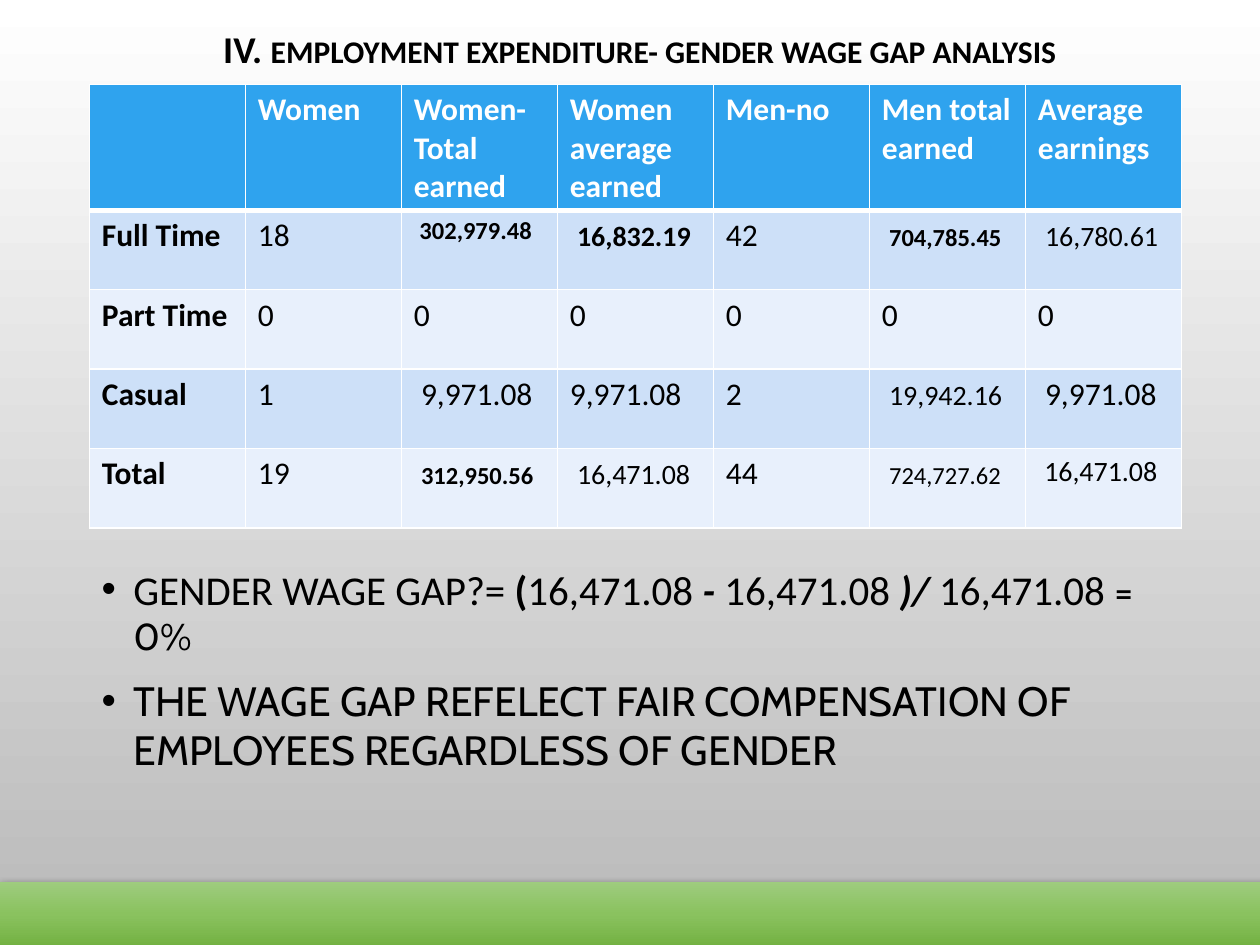
from copy import deepcopy
from dataclasses import dataclass

from lxml import etree
from pptx import Presentation
from pptx.dml.color import RGBColor
from pptx.enum.shapes import MSO_SHAPE
from pptx.enum.text import MSO_ANCHOR, MSO_AUTO_SIZE, PP_ALIGN
from pptx.oxml.ns import qn
from pptx.util import Cm, Pt

RECTANGLE = MSO_SHAPE.RECTANGLE
TOP = MSO_ANCHOR.TOP
NO_AUTOFIT = MSO_AUTO_SIZE.NONE
CENTER = PP_ALIGN.CENTER
DOWNWARD = 270


@dataclass(frozen=True)
class Theme:
    font: str = "Calibri"
    accent_font: str = "Cabin"
    text: str = "000000"
    white: str = "FFFFFF"
    header: str = "2FA3EE"
    bands: tuple = ("CDE0F8", "E8F0FC")
    background: tuple = ("FFFFFF", "B9B9B9")
    footer: tuple = ("9ECC7E", "8AC25F", "73B142")
    numeral_size: float = 21.6
    title_size: float = 18
    body_size: float = 23.4
    result_size: float = 21.4
    table_size: float = 18
    medium_size: float = 16
    small_size: float = 14


THEME = Theme()


@dataclass(frozen=True)
class Piece:
    text: str
    size: float = None
    bold: bool = None
    italic: bool = None
    font: str = None


def padded(value, size, bold=None):
    return [Piece(" "), Piece(value, size, bold)]


HEADINGS = ["", "Women", "Women- Total earned", "Women average earned",
            "Men-no", "Men total earned", "Average earnings"]
ROWS = [
    ["Full Time", "18", [Piece(" 302,979.48", THEME.small_size, True)],
     padded("16,832.19", THEME.medium_size, True), "42",
     padded("704,785.45", THEME.small_size, True),
     padded("16,780.61", THEME.medium_size)],
    ["Part Time"] + ["0"] * 6,
    ["Casual", "1", " 9,971.08", "9,971.08", "2",
     padded("19,942.16", THEME.medium_size), " 9,971.08"],
    ["Total", "19", padded("312,950.56", THEME.small_size, True),
     padded("16,471.08", THEME.medium_size), "44",
     padded("724,727.62", THEME.small_size),
     [Piece(" 16,471.08", THEME.medium_size)]],
]
AVERAGE = Piece("16,471.08 ")
BULLETS = [
    [Piece("GENDER WAGE GAP?= "), Piece("(", bold=True), AVERAGE,
     Piece("- ", bold=True, italic=True), AVERAGE,
     Piece(")/ ", bold=True, italic=True), AVERAGE,
     Piece("= 0%", THEME.result_size, font=THEME.accent_font)],
    [Piece("THE WAGE GAP REFELECT FAIR COMPENSATION OF EMPLOYEES "
           "REGARDLESS OF GENDER", font=THEME.accent_font)],
]


def rgb(color):
    return RGBColor.from_string(color)


def write(paragraph, content, size, color=THEME.text, bold=False):
    paragraph.font.name = THEME.font
    paragraph.font.size = Pt(size)
    paragraph.font.bold = bold
    paragraph.font.color.rgb = rgb(color)
    pieces = [Piece(content)] if isinstance(content, str) else content
    for piece in pieces:
        run = paragraph.add_run()
        run.text = piece.text
        if piece.size:
            run.font.size = Pt(piece.size)
        if piece.font:
            run.font.name = piece.font
        if piece.bold:
            run.font.bold = True
        if piece.italic:
            run.font.italic = True


def fill_gradient(fill, colors):
    fill.gradient()
    fill.gradient_angle = DOWNWARD
    stops = fill.gradient_stops
    last = stops[1]._gs
    for _ in colors[2:]:
        last.addprevious(deepcopy(last))
    for index, (stop, color) in enumerate(zip(fill.gradient_stops, colors)):
        stop.position = index / (len(colors) - 1)
        stop.color.rgb = rgb(color)


def add_title(slide):
    title = slide.shapes.title
    title.left, title.top, title.width, title.height = Cm(2.1), Cm(0.33), Cm(21.6), Cm(1.88)
    frame = title.text_frame
    frame.word_wrap = True
    frame.auto_size = NO_AUTOFIT
    frame.vertical_anchor = TOP
    paragraph = frame.paragraphs[0]
    paragraph.alignment = CENTER
    paragraph.line_spacing = 1.07
    write(paragraph, [Piece("IV. ", THEME.numeral_size),
                      Piece("EMPLOYMENT EXPENDITURE- GENDER WAGE GAP ANALYSIS")],
          THEME.title_size, bold=True)


def add_bullets(slide):
    box = slide.shapes.add_textbox(Cm(1.8), Cm(11.25), Cm(21.4), Cm(5.7))
    frame = box.text_frame
    frame.word_wrap = True
    for index, pieces in enumerate(BULLETS):
        paragraph = frame.add_paragraph() if index else frame.paragraphs[0]
        if index:
            paragraph.space_before = Pt(10)
        properties = paragraph._p.get_or_add_pPr()
        properties.set("marL", str(Cm(0.64)))
        properties.set("indent", str(-Cm(0.64)))
        etree.SubElement(properties, qn("a:buFont"), typeface="Arial")
        etree.SubElement(properties, qn("a:buChar"), char="•")
        write(paragraph, pieces, THEME.body_size)


def add_footer(slide):
    footer = slide.shapes.add_shape(RECTANGLE, 0, Cm(17.78), Cm(25.93), Cm(1.3))
    fill_gradient(footer.fill, THEME.footer)
    footer.line.fill.background()
    effects = etree.SubElement(footer._element.spPr, qn("a:effectLst"))
    shadow = etree.SubElement(effects, qn("a:outerShdw"), blurRad=str(Pt(5)),
                              dist=str(Pt(2)), dir="5400000", rotWithShape="0")
    color = etree.SubElement(shadow, qn("a:srgbClr"), val=THEME.text)
    etree.SubElement(color, qn("a:alpha"), val="69000")


def add_border(cell, side, width):
    line = etree.SubElement(cell._tc.get_or_add_tcPr(), qn(f"a:ln{side}"), w=str(Pt(width)))
    fill = etree.SubElement(line, qn("a:solidFill"))
    etree.SubElement(fill, qn("a:srgbClr"), val=THEME.white)


def format_cell(cell, content, color, is_header, is_label):
    widths = {"L": 1, "R": 1, "T": 1, "B": 3} if is_header else {"L": 1, "R": 1, "B": 1}
    for side, width in widths.items():
        add_border(cell, side, width)
    cell.fill.solid()
    cell.fill.fore_color.rgb = rgb(color)
    if content:
        write(cell.text_frame.paragraphs[0], content, THEME.table_size,
              THEME.white if is_header else THEME.text, is_header or is_label)


def add_wage_table(slide):
    contents = [HEADINGS] + ROWS
    row_height = Cm(1.6)
    table = slide.shapes.add_table(len(contents), len(HEADINGS), Cm(1.8), Cm(1.7),
                                   Cm(22.02), row_height * len(contents)).table
    for row_index, row in enumerate(contents):
        is_header = row_index == 0
        color = THEME.header if is_header else THEME.bands[(row_index - 1) % 2]
        for column_index, content in enumerate(row):
            format_cell(table.cell(row_index, column_index), content, color,
                        is_header, column_index == 0)


def main():
    presentation = Presentation()
    presentation.slide_width, presentation.slide_height = Cm(25.4), Cm(19.05)
    slide = presentation.slides.add_slide(presentation.slide_layouts.get_by_name("Title Only"))
    fill_gradient(slide.background.fill, THEME.background)
    add_title(slide)
    add_bullets(slide)
    add_footer(slide)
    add_wage_table(slide)
    presentation.save("out.pptx")


if __name__ == "__main__":
    main()
